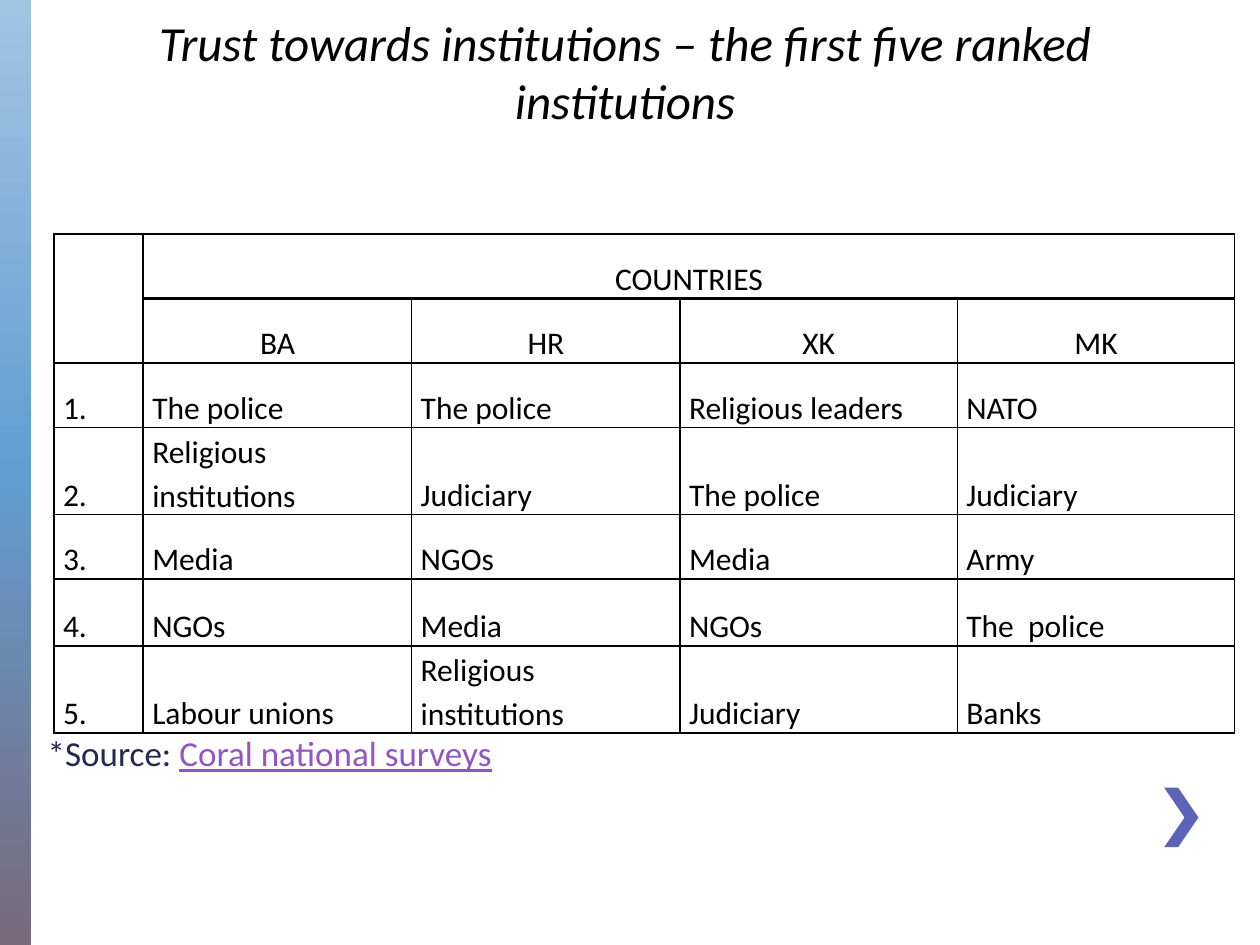
from copy import deepcopy

from lxml.etree import SubElement
from pptx import Presentation
from pptx.dml.color import RGBColor
from pptx.enum.shapes import MSO_SHAPE
from pptx.enum.text import MSO_ANCHOR, PP_ALIGN
from pptx.oxml.ns import qn
from pptx.util import Cm, Pt

BLACK = RGBColor(0x00, 0x00, 0x00)
NAVY = RGBColor(0x24, 0x28, 0x52)
PURPLE = RGBColor(0x94, 0x54, 0xC3)
INDIGO = RGBColor(0x5C, 0x64, 0xB7)
PALE_BLUE = RGBColor(0xA1, 0xC4, 0xE3)
SKY_BLUE = RGBColor(0x62, 0x9D, 0xD1)
MAUVE = RGBColor(0x78, 0x69, 0x7B)

THIN, THICK = 1, 1.5

HEADERS = [["", "COUNTRIES", "", "", ""], ["", "BA", "HR", "XK", "MK"]]
RANKING = [
    ["The police", "The police", "Religious leaders", "NATO"],
    ["Religious institutions", "Judiciary", "The police", "Judiciary"],
    ["Media", "NGOs", "Media", "Army"],
    ["NGOs", "Media", "NGOs", "The  police"],
    ["Labour unions", "Religious institutions", "Judiciary", "Banks"],
]


def set_values(target, values):
    for name, value in values.items():
        setattr(target, name, value)


class SlideBuilder:
    """Holds the text style and the current slide."""

    font_name = "Calibri"

    def __init__(self, slide):
        self.slide = slide

    def styled_run(self, paragraph, text, color, **font_format):
        run = paragraph.add_run()
        run.text = text
        set_values(run.font, {"name": self.font_name, **font_format})
        run.font.color.rgb = color

    def text_box(self, box, runs, anchor=MSO_ANCHOR.TOP, alignment=PP_ALIGN.LEFT):
        shape = self.slide.shapes.add_textbox(*map(Cm, box))
        set_values(shape.text_frame, {"word_wrap": True, "vertical_anchor": anchor})
        paragraph = shape.text_frame.paragraphs[0]
        paragraph.alignment = alignment
        for text, color, font_format in runs:
            self.styled_run(paragraph, text, color, **font_format)

    def gradient_bar(self, box, colors):
        shape = self.slide.shapes.add_shape(MSO_SHAPE.RECTANGLE, *map(Cm, box))
        shape.shadow.inherit = False
        shape.line.fill.background()
        shape.fill.gradient()
        shape.fill.gradient_angle = 270
        stop_list = next(shape._element.iter(qn("a:gsLst")))
        while len(stop_list) < len(colors):
            stop_list.append(deepcopy(stop_list[0]))
        for index, (stop, color) in enumerate(zip(shape.fill.gradient_stops, colors)):
            stop.position = index / (len(colors) - 1)
            stop.color.rgb = color

    def outline(self, points, color):
        start, *others = [(Cm(x), Cm(y)) for x, y in points]
        builder = self.slide.shapes.build_freeform(*start)
        builder.add_line_segments(others, close=True)
        shape = builder.convert_to_shape()
        shape.shadow.inherit = False
        shape.fill.solid()
        shape.fill.fore_color.rgb = color
        shape.line.fill.background()

    def borders(self, cell, widths):
        properties = cell._tc.get_or_add_tcPr()
        for side, width in widths.items():
            line = SubElement(properties, qn(f"a:ln{side}"), w=str(Pt(width)))
            fill = SubElement(line, qn("a:solidFill"))
            SubElement(fill, qn("a:srgbClr"), val=str(BLACK))

    def table(self, left, top, widths, heights, rows, header_count):
        frame = self.slide.shapes.add_table(
            len(heights), len(widths), Cm(left), Cm(top),
            Cm(sum(widths)), Cm(sum(heights)))
        table = frame.table
        set_values(table, {"first_row": False, "horz_banding": False})
        for column, width in zip(table.columns, widths):
            column.width = Cm(width)
        for row, height in zip(table.rows, heights):
            row.height = Cm(height)

        cell_format = {
            "vertical_anchor": MSO_ANCHOR.BOTTOM,
            "margin_left": Cm(0.18), "margin_right": Cm(0.18),
            "margin_top": 0, "margin_bottom": 0,
        }
        for row_index, values in enumerate(rows):
            for column_index, text in enumerate(values):
                cell = table.cell(row_index, column_index)
                set_values(cell, cell_format)
                # Thick lines beside the rank column and below the top header
                self.borders(cell, {
                    "L": THICK if column_index == 1 else THIN,
                    "R": THICK if column_index == 0 else THIN,
                    "T": THICK if row_index == 1 and column_index else THIN,
                    "B": THICK if row_index == 0 and column_index else THIN,
                })
                cell.fill.background()
                if text:
                    paragraph = cell.text_frame.paragraphs[0]
                    is_header = row_index < header_count
                    set_values(paragraph, {
                        "line_spacing": 1.15,
                        "alignment": PP_ALIGN.CENTER if is_header else PP_ALIGN.LEFT,
                    })
                    self.styled_run(paragraph, text, BLACK, size=Pt(18))
        return table


def main():
    presentation = Presentation()
    set_values(presentation, {"slide_width": Cm(25.4), "slide_height": Cm(19.05)})
    slide = presentation.slides.add_slide(presentation.slide_layouts[6])
    builder = SlideBuilder(slide)

    # Side bar and corner chevron
    builder.gradient_bar((0, 0, 0.63, 19.05), [PALE_BLUE, SKY_BLUE, MAUVE])
    left, top, width, height, thickness = 23.47, 15.88, 0.69, 1.2, 0.28
    middle, bottom, right = top + height / 2, top + height, left + width
    builder.outline([
        (left + thickness, top), (left, top), (right - thickness, middle),
        (left, bottom), (left + thickness, bottom), (right, middle),
    ], INDIGO)

    # Title
    builder.text_box(
        (1.5, 0.53, 22.2, 2.21),
        [("Trust towards institutions – the first five ranked institutions",
          BLACK, {"size": Pt(28), "italic": True})],
        MSO_ANCHOR.BOTTOM, PP_ALIGN.CENTER)

    # Source line
    builder.text_box((0.71, 14.63, 24.69, 1.2), [
        ("*Source: ", NAVY, {"size": Pt(20)}),
        ("Coral national surveys", PURPLE, {"size": Pt(20), "underline": True}),
    ])

    # Ranking table
    ranked_rows = [[f"{rank}.", *names] for rank, names in enumerate(RANKING, 1)]
    table = builder.table(
        1.09, 4.72, [1.8, 5.41, 5.41, 5.59, 5.59],
        [1.3, 1.3, 1.3, 1.32, 1.3, 1.35, 1.3],
        HEADERS + ranked_rows, len(HEADERS))
    table.cell(0, 0).merge(table.cell(1, 0))
    table.cell(0, 1).merge(table.cell(0, 4))

    presentation.save("out.pptx")


if __name__ == "__main__":
    main()
